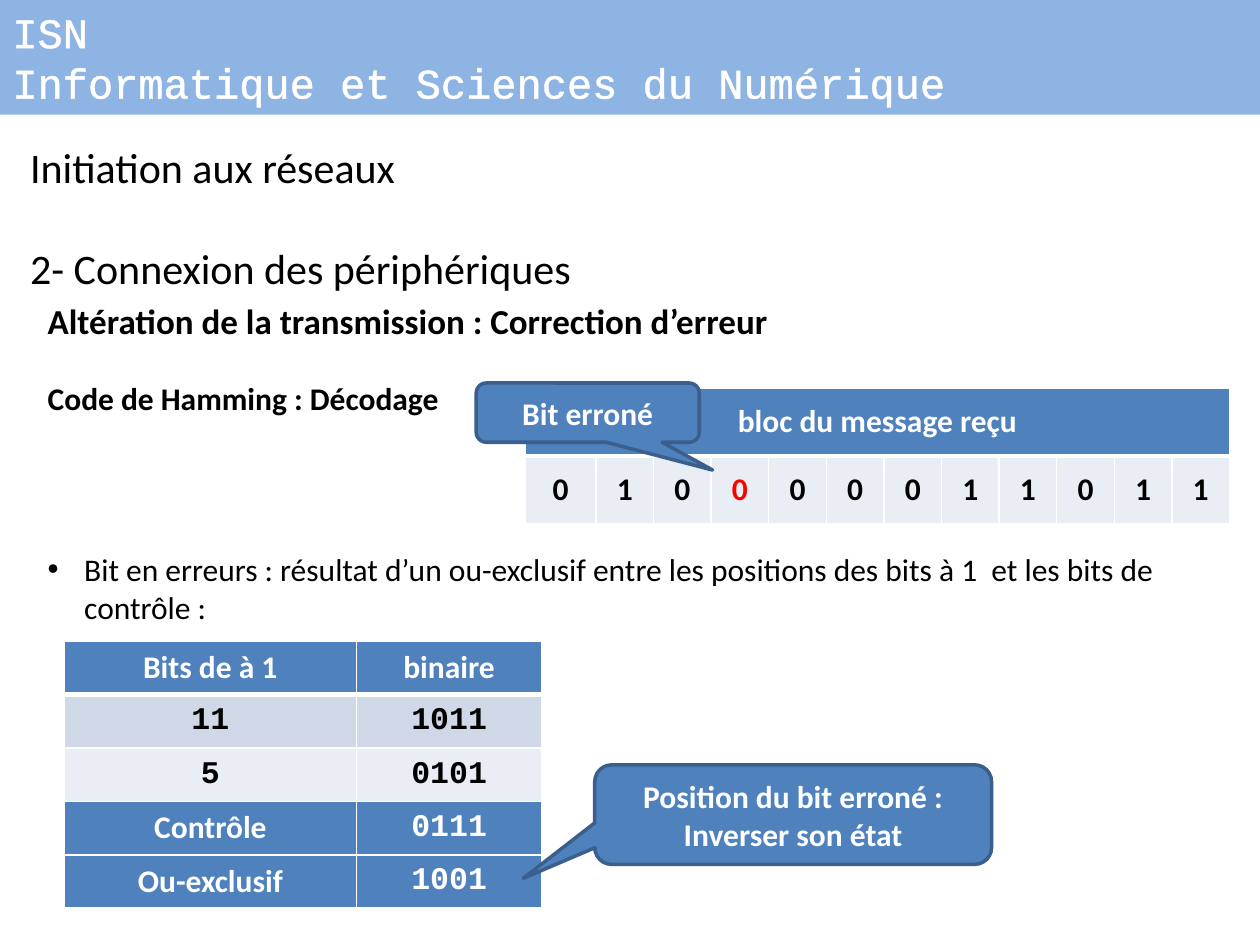
from lxml import etree
from pptx import Presentation
from pptx.dml.color import RGBColor
from pptx.enum.shapes import MSO_SHAPE
from pptx.enum.text import MSO_ANCHOR, PP_ALIGN
from pptx.oxml.ns import qn
from pptx.util import Inches, Pt

RECT = MSO_SHAPE.RECTANGLE
BUBBLE = MSO_SHAPE.ROUNDED_RECTANGULAR_CALLOUT
MIDDLE, TOP = MSO_ANCHOR.MIDDLE, MSO_ANCHOR.TOP
LEFT, CENTER = PP_ALIGN.LEFT, PP_ALIGN.CENTER

WHITE = RGBColor(0xFF, 0xFF, 0xFF)
BLACK = RGBColor(0x00, 0x00, 0x00)
RED = RGBColor(0xFF, 0x00, 0x00)
SKY = RGBColor(0x8E, 0xB4, 0xE3)
BLUE = RGBColor(0x4F, 0x81, 0xBD)
NAVY = RGBColor(0x3A, 0x5F, 0x8C)
PALE = RGBColor(0xE9, 0xED, 0xF4)
MIST = RGBColor(0xD0, 0xD8, 0xE8)
SANS, MONO = "Calibri", "Courier New"


class Deck:
    """Hold the style and the current slide, and draw each kind of element."""

    def __init__(self, slide):
        self.slide = slide
        self.shapes = slide.shapes

    def stroke(self, parent, tag, width, color):
        line = etree.SubElement(parent, qn(tag), w=str(Pt(width)))
        fill = etree.SubElement(line, qn("a:solidFill"))
        etree.SubElement(fill, qn("a:srgbClr"), val=str(color))
        return line

    def run(self, para, text, size=18, color=BLACK, bold=False, font=SANS):
        run = para.add_run()
        run.text = text
        run.font.size = Pt(size)
        run.font.bold = bold
        run.font.name = font
        run.font.color.rgb = color
        return run

    def lines(self, frame, texts, align=LEFT, gap=0, **style):
        for i, text in enumerate(texts):
            para = frame.add_paragraph() if i else frame.paragraphs[0]
            para.alignment = align
            if i and gap:
                para.space_before = Pt(gap)
            self.run(para, text, **style)

    def text(self, box, texts, wrap=True, **style):
        frame = self.shapes.add_textbox(*map(Inches, box)).text_frame
        frame.word_wrap = wrap
        self.lines(frame, texts, **style)
        return frame

    def bullet(self, frame, text, gap):
        para = frame.add_paragraph()
        props = para._p.get_or_add_pPr()
        props.set("marL", str(Inches(0.29)))
        props.set("indent", str(Inches(-0.29)))
        etree.SubElement(props, qn("a:buFont"), typeface="Arial")
        etree.SubElement(props, qn("a:buChar"), char="•")
        para.space_before = Pt(gap)
        self.run(para, text)

    def shape(self, kind, box, fill):
        shape = self.shapes.add_shape(kind, *map(Inches, box))
        shape.shadow.inherit = False
        shape.fill.solid()
        shape.fill.fore_color.rgb = fill
        shape.line.fill.background()
        shape.text_frame.word_wrap = True
        return shape

    def banner(self, box, texts):
        frame = self.shape(RECT, box, SKY).text_frame
        frame.vertical_anchor = TOP
        self.lines(frame, texts, size=24, color=WHITE, font=MONO)
        for para in frame.paragraphs:
            for run in para.runs:
                props = run._r.get_or_add_rPr()
                props.insert(0, self.stroke(props, "a:ln", 1.45, WHITE))

    def callout(self, box, tip, texts):
        shape = self.shape(BUBBLE, box, BLUE)
        shape.line.color.rgb = NAVY
        shape.line.width = Pt(2)
        for i, value in enumerate((*tip, 0.17)):
            shape.adjustments[i] = value
        shape.text_frame.vertical_anchor = MIDDLE
        self.lines(shape.text_frame, texts, CENTER, color=WHITE, bold=True)

    def table(self, box, rows, cols, first):
        table = self.shapes.add_table(rows, cols, *map(Inches, box)).table
        rest = (Inches(box[2]) - Inches(first)) // (cols - 1)
        for i, col in enumerate(table.columns):
            col.width = rest if i else Inches(first)
        return table

    def cell(self, cell, text, fill, color=BLACK, font=SANS, base=1, inset=None):
        if inset is not None:
            cell.margin_left = cell.margin_right = Inches(inset)
            cell.margin_top = cell.margin_bottom = Inches(inset)
        cell.vertical_anchor = MIDDLE
        props = cell._tc.get_or_add_tcPr()
        for side in "LRTB":
            self.stroke(props, "a:ln" + side, base if side == "B" else 1, WHITE)
        cell.fill.solid()
        cell.fill.fore_color.rgb = fill
        if text:
            self.lines(cell.text_frame, [text], CENTER, color=color, bold=True, font=font)


def main():
    prs = Presentation()
    prs.slide_width, prs.slide_height = Inches(10), Inches(7.5)
    deck = Deck(prs.slides.add_slide(prs.slide_layouts[6]))

    deck.banner((0, 0, 10, 0.91), ["ISN", "Informatique et Sciences du Numérique"])
    deck.text((0.14, 1.07, 4.61, 1.31),
              ["Initiation aux réseaux", "2- Connexion des périphériques"],
              wrap=False, gap=29, size=24)
    deck.text((0.28, 2.33, 9.37, 0.44),
              ["Altération de la transmission : Correction d’erreur"], size=20, bold=True)
    body = deck.text((0.28, 2.96, 9.72, 3.23), ["Code de Hamming : Décodage"], bold=True)
    deck.bullet(body, "Bit en erreurs : résultat d’un ou-exclusif entre les positions "
                "des bits à 1  et les bits de contrôle :", gap=76)

    bits, wrong = "010000011011", 3
    block = deck.table((4.17, 3.08, 5.59, 1.08), 2, len(bits), 0.56)
    block.cell(0, 0).merge(block.cell(0, len(bits) - 1))
    for i, bit in enumerate(bits):
        head = "" if i else "bloc du message reçu"
        deck.cell(block.cell(0, i), head, BLUE, WHITE, base=3, inset=0)
        deck.cell(block.cell(1, i), bit, PALE, RED if i == wrong else BLACK, inset=0)
    deck.callout((3.78, 3.04, 1.77, 0.47), (0.56, 0.97), ["Bit erroné"])

    rows = [
        ("Bits de à 1", "binaire", BLUE, WHITE, SANS, SANS),
        ("11", "1011", MIST, BLACK, MONO, MONO),
        ("5", "0101", PALE, BLACK, MONO, MONO),
        ("Contrôle", "0111", BLUE, WHITE, SANS, MONO),
        ("Ou-exclusif", "1001", BLUE, WHITE, SANS, MONO),
    ]
    check = deck.table((0.51, 5.09, 3.79, 2.12), len(rows), 2, 2.32)
    for i, (name, code, fill, color, left, right) in enumerate(rows):
        base = 1 if i else 3
        deck.cell(check.cell(i, 0), name, fill, color, left, base)
        deck.cell(check.cell(i, 1), code, fill, color, right, base)
    deck.callout((4.72, 6.07, 3.15, 0.79), (-0.68, 0.64),
                 ["Position du bit erroné :", "Inverser son état"])

    prs.save("out.pptx")


if __name__ == "__main__":
    main()
